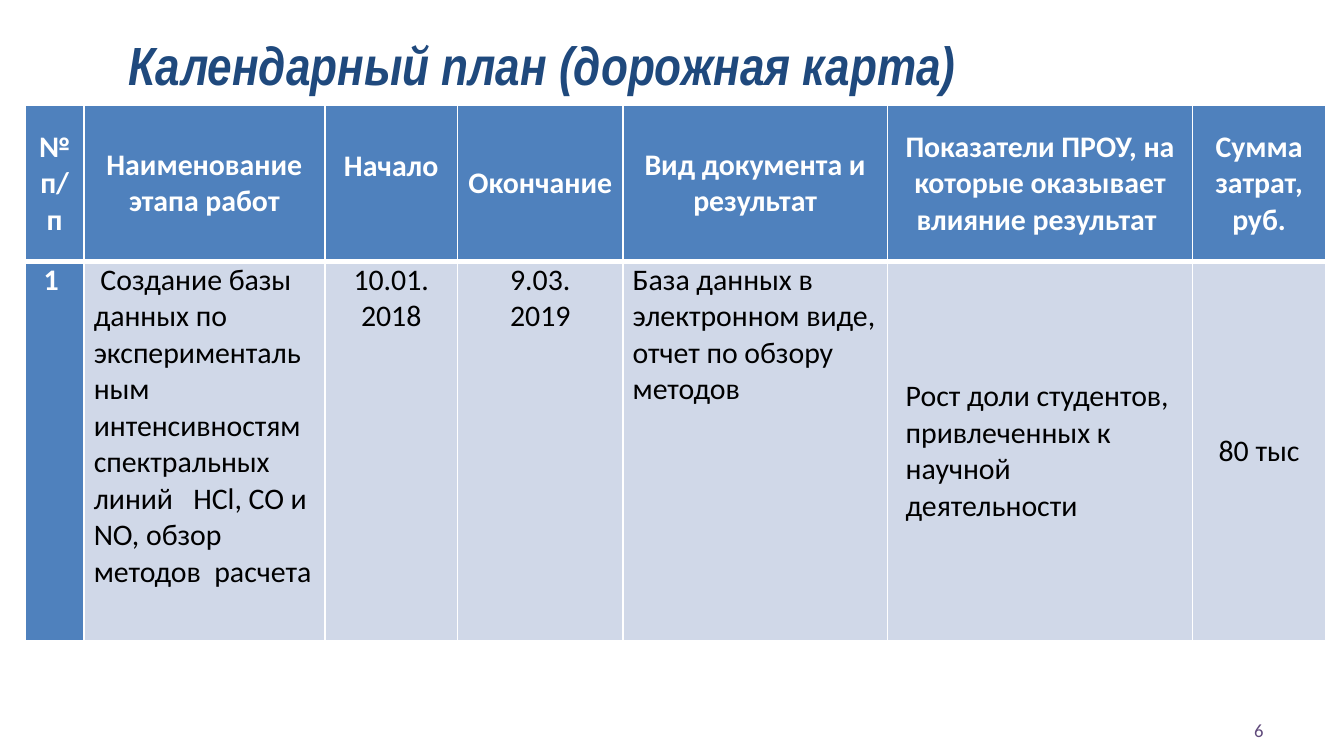
"""Build the calendar plan (road map) slide."""
from lxml.etree import SubElement
from pptx import Presentation
from pptx.dml.color import RGBColor
from pptx.enum.text import MSO_ANCHOR, PP_ALIGN
from pptx.oxml.ns import qn
from pptx.util import Pt

LEFT, MID, RIGHT = PP_ALIGN.LEFT, PP_ALIGN.CENTER, PP_ALIGN.RIGHT
TOP, HALF = MSO_ANCHOR.TOP, MSO_ANCHOR.MIDDLE

TITLE = "Календарный план (дорожная карта) "
PAGE = "6"
HEADS = [
    "№ п/п",
    "Наименование этапа работ",
    "Начало",
    "Окончание",
    "Вид документа и результат",
    "Показатели ПРОУ, на которые оказывает влияние результат ",
    "Сумма затрат, руб.",
]
STAGE = [
    ("1 ", MID, TOP),
    (" Создание базы данных по экспериментальным интенсивностям "
     "спектральных линий   HCl, CO и NO, обзор методов  расчета", LEFT, TOP),
    ("10.01.\n2018", MID, TOP),
    ("9.03.\n2019", MID, TOP),
    ("База данных в электронном виде, отчет по обзору методов", LEFT, TOP),
    ("Рост доли студентов, привлеченных к научной деятельности", LEFT, HALF),
    ("80 тыс", MID, HALF),
]
ROWS = [[(head, MID, HALF) for head in HEADS], STAGE]

THEME = {
    "title": dict(name="Arial Narrow", size=Pt(28.8), bold=True, italic=True, color="1F497D"),
    "head": dict(name="Calibri", size=Pt(16), bold=True, color="FFFFFF"),
    "body": dict(name="Calibri", size=Pt(16), bold=False, color="000000"),
    "page": dict(name="Calibri", size=Pt(10), color="604A7B"),
    "head fill": "4F81BD",
    "body fill": "D0D8E8",
    "rule": "FFFFFF",
}

SCALE = 9525
SIZE = (960, 540)
TITLE_BOX = (-19, 24, 822, 43)
PAGE_BOX = (688, 507, 224, 29)
GRID = (18, 75)
WIDTHS = [42, 172, 95, 118, 189, 218, 95]
HEIGHTS = [112, 271]
INSET = 7
LIFT = {(0, 2): 24}
INDENT = {(1, 5): 6}
THIN, THICK = 1, 3


def px(count):
    """Turn px into EMU."""
    return count * SCALE


def assign(item, values):
    """Set each named attribute."""
    for name, value in values.items():
        setattr(item, name, value)


def place(shape, box):
    """Move and size a shape."""
    assign(shape, dict(zip(("left", "top", "width", "height"), map(px, box))))


def write(frame, text, style, align, anchor):
    """Fill a text frame and format it."""
    frame.text = text
    assign(frame, dict(word_wrap=True, vertical_anchor=anchor))
    look = dict(THEME[style])
    shade = look.pop("color")
    for para in frame.paragraphs:
        para.alignment = align
        for run in para.runs:
            assign(run.font, look)
            run.font.color.rgb = RGBColor.from_string(shade)


def edge(cell, first):
    """Draw the four borders of a cell."""
    props = cell._tc.get_or_add_tcPr()
    sides = dict(L=THIN, R=THIN, T=THIN if first else THICK, B=THICK if first else THIN)
    for spot, (side, weight) in enumerate(sides.items()):
        line = SubElement(props, qn(f"a:ln{side}"), w=str(Pt(weight)))
        fill = SubElement(line, qn("a:solidFill"))
        SubElement(fill, qn("a:srgbClr"), val=THEME["rule"])
        props.insert(spot, line)


def dress(cell, row, col, entry):
    """Write, fill and border one table cell."""
    key = "head" if row == 0 or col == 0 else "body"
    text, align, anchor = entry
    write(cell.text_frame, text, key, align, anchor)
    assign(cell, dict(
        vertical_anchor=anchor, margin_left=px(INSET), margin_right=px(INSET),
        margin_top=0, margin_bottom=px(LIFT.get((row, col), 0)),
    ))
    if (row, col) in INDENT:
        props = cell.text_frame.paragraphs[0]._p.get_or_add_pPr()
        props.set("marL", str(px(INDENT[row, col])))
    cell.fill.solid()
    cell.fill.fore_color.rgb = RGBColor.from_string(THEME[f"{key} fill"])
    edge(cell, row == 0)


def main():
    """Build and save the slide."""
    deck = Presentation()
    deck.slide_width, deck.slide_height = map(px, SIZE)
    slide = deck.slides.add_slide(deck.slide_layouts[5])
    shapes = slide.shapes

    page = shapes.add_textbox(*map(px, PAGE_BOX))
    write(page.text_frame, PAGE, "page", RIGHT, HALF)
    place(shapes.title, TITLE_BOX)
    write(shapes.title.text_frame, TITLE, "title", MID, HALF)

    area = (*GRID, sum(WIDTHS), sum(HEIGHTS))
    table = shapes.add_table(len(ROWS), len(WIDTHS), *map(px, area)).table
    assign(table, dict(first_col=True, horz_banding=False))
    for col, width in zip(table.columns, WIDTHS):
        col.width = px(width)
    for row, height in zip(table.rows, HEIGHTS):
        row.height = px(height)
    for row, line in enumerate(ROWS):
        for col, entry in enumerate(line):
            dress(table.cell(row, col), row, col, entry)
    deck.save("out.pptx")


if __name__ == "__main__":
    main()
